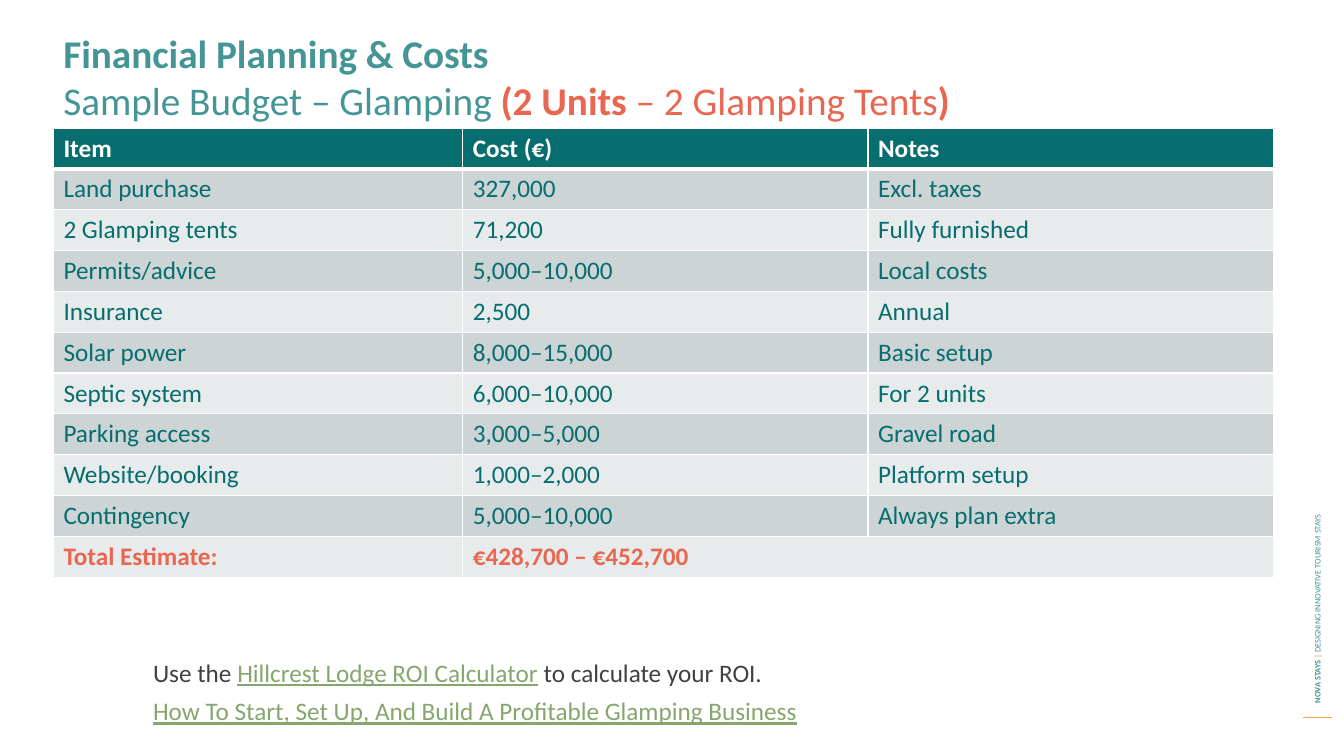
import dataclasses

import pptx
import pptx.dml.color
import pptx.enum.shapes
import pptx.enum.text
import pptx.oxml
import pptx.oxml.ns
import pptx.util
from pptx.util import Inches

FONT = "Calibri"
TEAL, DARK_TEAL, CORAL = "459597", "086D6E", "E96751"
GREEN, GREY, AMBER, WHITE = "87A66E", "414141", "FBA63B", "FFFFFF"
BANDS = ("E7EBEB", "CCD4D5")
MIDDLE = pptx.enum.text.MSO_ANCHOR.MIDDLE


@dataclasses.dataclass
class Run:
    text: str
    color: str
    bold: bool = False
    underline: bool = False


@dataclasses.dataclass
class Box:
    at: tuple[float, float, float, float]
    size: float
    lines: list[list[Run]]
    rotation: float = 0
    anchor: pptx.enum.text.MSO_ANCHOR = pptx.enum.text.MSO_ANCHOR.TOP


BOXES = [
    Box((10.18, 4.09, 5.77, 0.2), 6, [[
        Run("NOVA STAYS ", TEAL, bold=True),
        Run("| ", AMBER, bold=True),
        Run("DESIGNING INNOVATIVE TOURISM STAYS", TEAL),
    ]], rotation=270, anchor=MIDDLE),
    Box((0.53, 0.24, 11.61, 0.88), 28, [
        [Run("Financial Planning & Costs", TEAL, bold=True)],
        [
            Run("Sample Budget – Glamping ", TEAL),
            Run("(2 Units ", CORAL, bold=True),
            Run("– 2 Glamping Tents", CORAL),
            Run(")", CORAL, bold=True),
        ],
    ]),
    Box((1.42, 6.47, 10.5, 0.4), 18, [[
        Run("Use the\u00a0", GREY),
        Run("Hillcrest Lodge ROI Calculator", GREEN, underline=True),
        Run("\u00a0to calculate your ROI.", GREY),
    ]]),
    Box((1.42, 6.85, 6.9, 0.4), 18, [[
        Run("How To Start, Set Up, And Build A Profitable Glamping Business",
            GREEN, underline=True),
    ]]),
]

BUDGET = [
    ("Item", "Cost (€)", "Notes"),
    ("Land purchase", "327,000", "Excl. taxes"),
    ("2 Glamping tents", "71,200", "Fully furnished"),
    ("Permits/advice", "5,000–10,000", "Local costs"),
    ("Insurance", "2,500", "Annual"),
    ("Solar power", "8,000–15,000", "Basic setup"),
    ("Septic system", "6,000–10,000", "For 2 units"),
    ("Parking access", "3,000–5,000", "Gravel road"),
    ("Website/booking", "1,000–2,000", "Platform setup"),
    ("Contingency", "5,000–10,000", "Always plan extra"),
    ("Total Estimate:", "€428,700 – €452,700", ""),
]
COLUMN_WIDTHS = (4.06, 4.02, 4.02)


def rgb(color: str) -> pptx.dml.color.RGBColor:
    return pptx.dml.color.RGBColor.from_string(color)


def add_run(p, run: Run, size: float) -> None:
    r = p.add_run()
    r.text = run.text
    formats = {"name": FONT, "size": pptx.util.Pt(size),
               "bold": run.bold, "underline": run.underline}
    for name, value in formats.items():
        setattr(r.font, name, value)
    r.font.color.rgb = rgb(run.color)


def add_box(s, box: Box) -> None:
    sp = s.shapes.add_textbox(*map(Inches, box.at))
    sp.rotation = box.rotation
    tf = sp.text_frame
    formats = {"word_wrap": True, "vertical_anchor": box.anchor}
    for name, value in formats.items():
        setattr(tf, name, value)
    for i, line in enumerate(box.lines):
        p = tf.add_paragraph() if i else tf.paragraphs[0]
        for run in line:
            add_run(p, run, box.size)


def set_borders(cell, widths: dict[str, float]) -> None:
    # Border elements come before the fill, in the order L, R, T, B
    tc_pr = cell._tc.get_or_add_tcPr()
    for i, (side, width) in enumerate(widths.items()):
        tc_pr.insert(i, pptx.oxml.parse_xml(
            f'<a:ln{side} {pptx.oxml.ns.nsdecls("a")} w="{pptx.util.Pt(width)}">'
            f'<a:solidFill><a:srgbClr val="{WHITE}"/></a:solidFill></a:ln{side}>'))


def add_budget(s) -> None:
    last = len(BUDGET) - 1
    table = s.shapes.add_table(
        len(BUDGET), len(COLUMN_WIDTHS), Inches(0.53), Inches(1.27),
        Inches(sum(COLUMN_WIDTHS)), Inches(4.46)).table
    for column, width in zip(table.columns, COLUMN_WIDTHS):
        column.width = Inches(width)
    table.cell(last, 1).merge(table.cell(last, 2))
    for i, row in enumerate(BUDGET):
        color = {0: WHITE, last: CORAL}.get(i, DARK_TEAL)
        for j, text in enumerate(row):
            cell = table.cell(i, j)
            cell.vertical_anchor = MIDDLE
            cell.fill.solid()
            cell.fill.fore_color.rgb = rgb(BANDS[i % 2] if i else DARK_TEAL)
            set_borders(cell, {"L": 1, "R": 1, "T": 3 if i == 1 else 1,
                               "B": 1 if i else 3})
            if text:
                run = Run(text, color, bold=i in (0, last))
                add_run(cell.text_frame.paragraphs[0], run, 18)


def add_rule(s) -> None:
    line = s.shapes.add_connector(
        pptx.enum.shapes.MSO_CONNECTOR.STRAIGHT,
        Inches(12.92), Inches(7.12), Inches(13.21), Inches(7.12))
    line.line.color.rgb = rgb("FBA63D")
    line.line.width = pptx.util.Pt(0.75)
    line._element.spPr.append(pptx.oxml.parse_xml(
        f'<a:effectLst {pptx.oxml.ns.nsdecls("a")}/>'))


def main() -> None:
    prs = pptx.Presentation()
    prs.slide_width, prs.slide_height = Inches(13.33), Inches(7.5)
    s = prs.slides.add_slide(prs.slide_layouts[6])

    # Side rule, headings and footer texts
    add_rule(s)
    for box in BOXES:
        add_box(s, box)

    # Budget table
    add_budget(s)
    prs.save("out.pptx")


if __name__ == "__main__":
    main()
